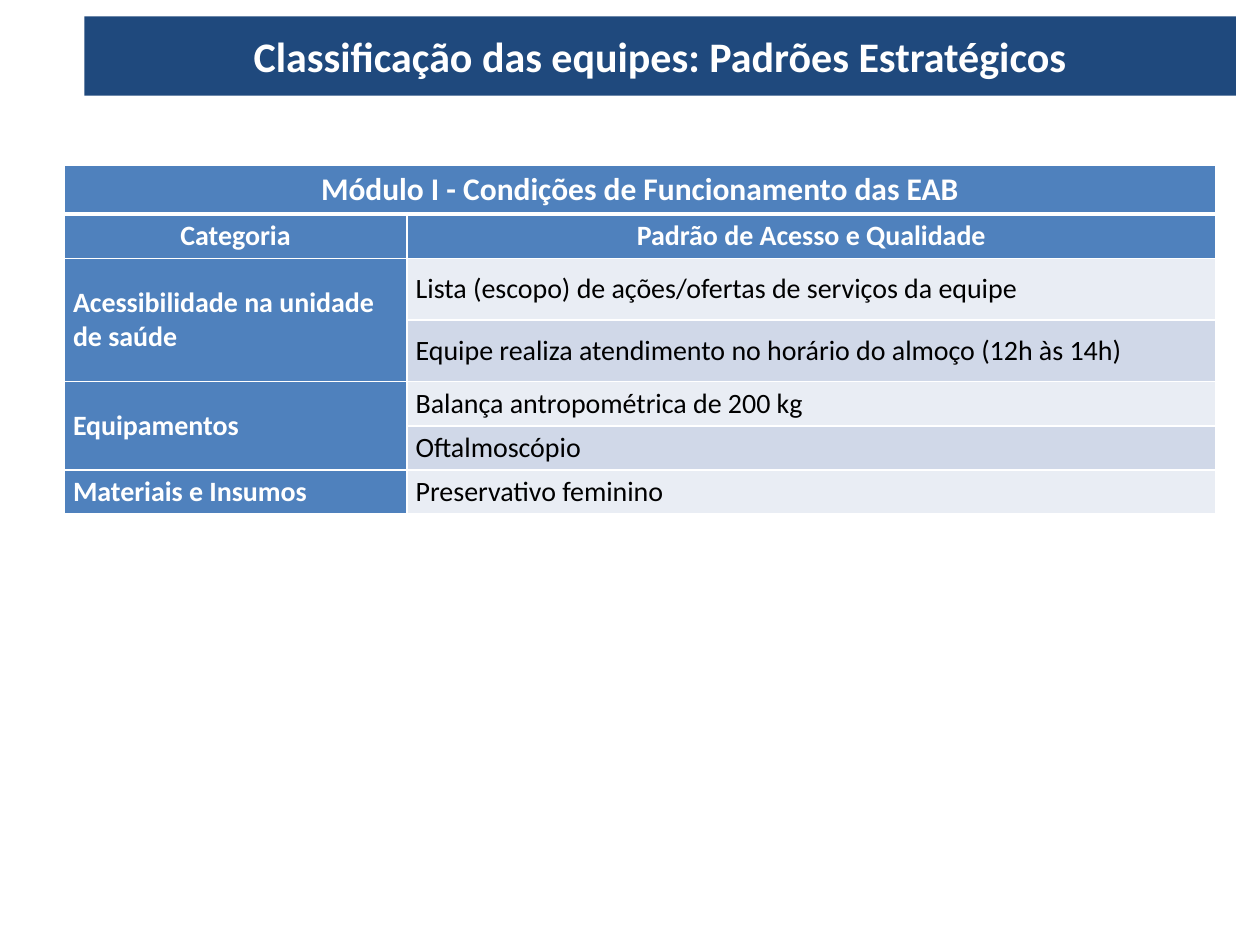
import pptx
import pptx.util
import pptx.dml.color
import pptx.enum.shapes
import pptx.enum.text
import pptx.oxml.ns
import lxml.etree

Inches = pptx.util.Inches
RGBColor = pptx.dml.color.RGBColor
ALIGN = pptx.enum.text.PP_ALIGN
MIDDLE = pptx.enum.text.MSO_ANCHOR.MIDDLE

NAVY = RGBColor(0x1F, 0x49, 0x7D)
BLUE = RGBColor(0x4F, 0x81, 0xBD)
BANDS = (RGBColor(0xE9, 0xED, 0xF4), RGBColor(0xD0, 0xD8, 0xE8))
WHITE = RGBColor(0xFF, 0xFF, 0xFF)
BLACK = RGBColor(0, 0, 0)

PAGE_WIDTH, PAGE_HEIGHT = Inches(10), Inches(7.5)
CONTENT_WIDTH = Inches(9.14)
COLUMN_WIDTHS = (2.72, 6.42)
ROW_HEIGHTS = (0.39, 0.35, 0.49, 0.49, 0.35, 0.35, 0.35)

TITLE = "Classificação das equipes: Padrões Estratégicos"
MODULE = "Módulo I - Condições de Funcionamento das EAB"
HEADINGS = ("Categoria", "Padrão de Acesso e Qualidade")
STANDARDS = {
    "Acessibilidade na unidade de saúde": (
        "Lista (escopo) de ações/ofertas de serviços da equipe",
        "Equipe realiza atendimento no horário do almoço (12h às 14h)",
    ),
    "Equipamentos": ("Balança antropométrica de 200 kg", "Oftalmoscópio"),
    "Materiais e Insumos": ("Preservativo feminino",),
}


def apply(target, values):
    for name, value in values.items():
        setattr(target, name, value)


def write(frame, text, size, color=WHITE, bold=True, align=ALIGN.CENTER):
    para = frame.paragraphs[0]
    para.alignment = align
    span = para.add_run()
    span.text = text
    apply(span.font, {"name": "Calibri", "size": pptx.util.Pt(size), "bold": bold})
    span.font.color.rgb = color


def add_banner(page):
    box = page.shapes.add_shape(
        pptx.enum.shapes.MSO_SHAPE.RECTANGLE,
        Inches(0.67), Inches(0.13), CONTENT_WIDTH, Inches(0.63))
    box.shadow.inherit = False
    box.fill.solid()
    box.fill.fore_color.rgb = NAVY
    box.line.fill.background()
    apply(box.text_frame, {"word_wrap": True, "vertical_anchor": MIDDLE})
    write(box.text_frame, TITLE, 24)


def add_borders(cell, widths):
    properties = cell._tc.get_or_add_tcPr()
    for side, width in widths.items():
        line = lxml.etree.SubElement(
            properties, pptx.oxml.ns.qn(f"a:ln{side}"), w=str(pptx.util.Pt(width)))
        fill = lxml.etree.SubElement(line, pptx.oxml.ns.qn("a:solidFill"))
        lxml.etree.SubElement(fill, pptx.oxml.ns.qn("a:srgbClr"), val=str(WHITE))


def style_cell(cell, row):
    add_borders(cell, {"L": 1, "R": 1, "T": 3 if row == 1 else 1, "B": 3 if row == 0 else 1})
    apply(cell, {"vertical_anchor": MIDDLE, "margin_left": Inches(0.07),
                 "margin_right": Inches(0.07), "margin_top": 0, "margin_bottom": 0})


def fill_cell(cell, text, fill, size=16, **format_values):
    cell.fill.solid()
    cell.fill.fore_color.rgb = fill
    write(cell.text_frame, text, size, **format_values)


def add_standards_table(page):
    table = page.shapes.add_table(
        len(ROW_HEIGHTS), len(COLUMN_WIDTHS), Inches(0.51), Inches(1.31),
        CONTENT_WIDTH, Inches(sum(ROW_HEIGHTS))).table
    for column, width in zip(table.columns, COLUMN_WIDTHS):
        column.width = Inches(width)
    for index, height in enumerate(ROW_HEIGHTS):
        table.rows[index].height = Inches(height)
        for cell in table.rows[index].cells:
            style_cell(cell, index)

    table.cell(0, 0).merge(table.cell(0, 1))
    fill_cell(table.cell(0, 0), MODULE, BLUE, size=18)
    for column, heading in enumerate(HEADINGS):
        fill_cell(table.cell(1, column), heading, BLUE)

    row = 2
    for category, standards in STANDARDS.items():
        if len(standards) > 1:
            table.cell(row, 0).merge(table.cell(row + len(standards) - 1, 0))
        fill_cell(table.cell(row, 0), category, BLUE, align=ALIGN.LEFT)
        for standard in standards:
            fill_cell(table.cell(row, 1), standard, BANDS[row % 2],
                      color=BLACK, bold=False, align=ALIGN.LEFT)
            row += 1


def main():
    deck = pptx.Presentation()
    apply(deck, {"slide_width": PAGE_WIDTH, "slide_height": PAGE_HEIGHT})
    page = deck.slides.add_slide(deck.slide_layouts[6])
    add_banner(page)
    add_standards_table(page)
    deck.save("out.pptx")


if __name__ == "__main__":
    main()
